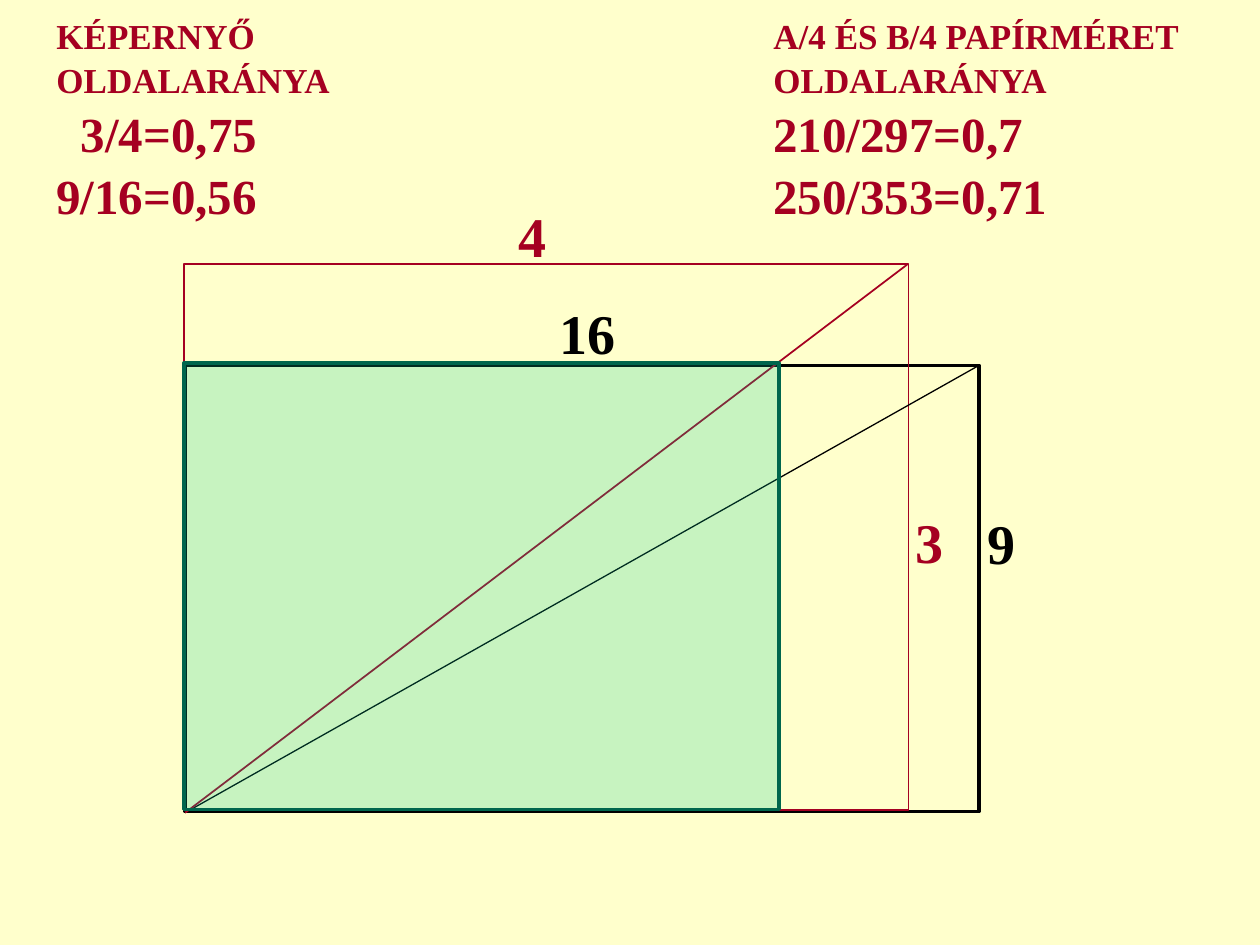
from lxml.etree import SubElement
from pptx import Presentation
from pptx.dml.color import RGBColor
from pptx.enum.shapes import MSO_CONNECTOR as Connector, MSO_SHAPE as Shape
from pptx.enum.text import MSO_AUTO_SIZE as AutoSize
from pptx.oxml.ns import qn
from pptx.util import Pt

COLORS = {"background": "FFFFCC", "red": "A50021", "black": "000000",
          "paper": "00CC99", "paper edge": "00664D"}
FONT = "Times New Roman"

# Frames: left, top, width, height, colour, line width
WIDE_SCREEN = (105.84, 208.8, 453.6, 255, "black", 2)
SCREEN = (105.12, 151, 414, 312, "red", 1)
PAPER = (105.12, 207.5, 340, 255, "paper edge", 2)
PAPER_OPACITY = 22

# Diagonals: far corner, colour, line width
CORNER = (105.84, 464.4)
DIAGONALS = [((559.44, 208.8), "black", 0.75), ((518.4, 151.2), "red", 1)]

# Side labels: text, left, top, width, colour
LABELS = [("4", 289.4, 111.6, 31, "red"), ("3", 516.2, 286.6, 31, "red"),
          ("16", 312.5, 167, 46.8, "black"), ("9", 557.3, 287.3, 31, "black")]

# Ratio lists: left, width, lines of (text, size, indent)
RATIOS = [
    (25.2, 172.8, [("KÉPERNYŐ", 20, 0), ("OLDALARÁNYA", 20, 0),
                   ("3/4=0,75", 28, 14), ("9/16=0,56", 28, 0)]),
    (434.9, 248.4, [("A/4 ÉS B/4 PAPÍRMÉRET", 20, 0), ("OLDALARÁNYA", 20, 0),
                    ("210/297=0,7", 28, 0), ("250/353=0,71", 28, 0)]),
]


def rgb(name):
    return RGBColor.from_string(COLORS[name])


def style_line(shape, color, width):
    shape.line.color.rgb = rgb(color)
    shape.line.width = Pt(width)


def add_frame(left, top, width, height, color, line_width):
    frame = slide.shapes.add_shape(Shape.RECTANGLE, Pt(left), Pt(top), Pt(width), Pt(height))
    frame.shadow.inherit = False
    frame.fill.background()
    style_line(frame, color, line_width)
    return frame


def add_text(left, top, width, height, lines, color, spacing=1.0):
    box = slide.shapes.add_textbox(Pt(left), Pt(top), Pt(width), Pt(height))
    frame = box.text_frame
    frame.word_wrap = False
    frame.auto_size = AutoSize.SHAPE_TO_FIT_TEXT
    frame.text = "\n".join(text for text, _, _ in lines)
    for para, (_, size, indent) in zip(frame.paragraphs, lines):
        para.line_spacing = spacing
        if indent:
            para._p.get_or_add_pPr().set("marL", str(Pt(indent)))
        font = para.runs[0].font
        font.name, font.size, font.bold = FONT, Pt(size), True
        font.color.rgb = rgb(color)


deck = Presentation()
deck.slide_width, deck.slide_height = Pt(720), Pt(540)
slide = deck.slides.add_slide(deck.slide_layouts[6])
slide.background.fill.solid()
slide.background.fill.fore_color.rgb = rgb("background")

# Screen frames
add_frame(*WIDE_SCREEN)
add_frame(*SCREEN)

# Diagonals from the shared lower left corner
for far_corner, color, width in DIAGONALS:
    diagonal = slide.shapes.add_connector(
        Connector.STRAIGHT, *(Pt(value) for value in CORNER + far_corner))
    style_line(diagonal, color, width)
    SubElement(diagonal._element.spPr, qn("a:effectLst"))

# Translucent paper sheet
paper = add_frame(*PAPER)
paper.fill.solid()
paper.fill.fore_color.rgb = rgb("paper")
paper_color = paper._element.spPr.find(qn("a:solidFill"))[0]
SubElement(paper_color, qn("a:alpha")).set("val", str(PAPER_OPACITY * 1000))

# Side labels and ratio lists
for text, left, top, width, color in LABELS:
    add_text(left, top, width, 46, [(text, 32, 0)], color)
for left, width, lines in RATIOS:
    add_text(left, 3.6, width, 123.8, lines, "red", spacing=1.05)

deck.save("out.pptx")
